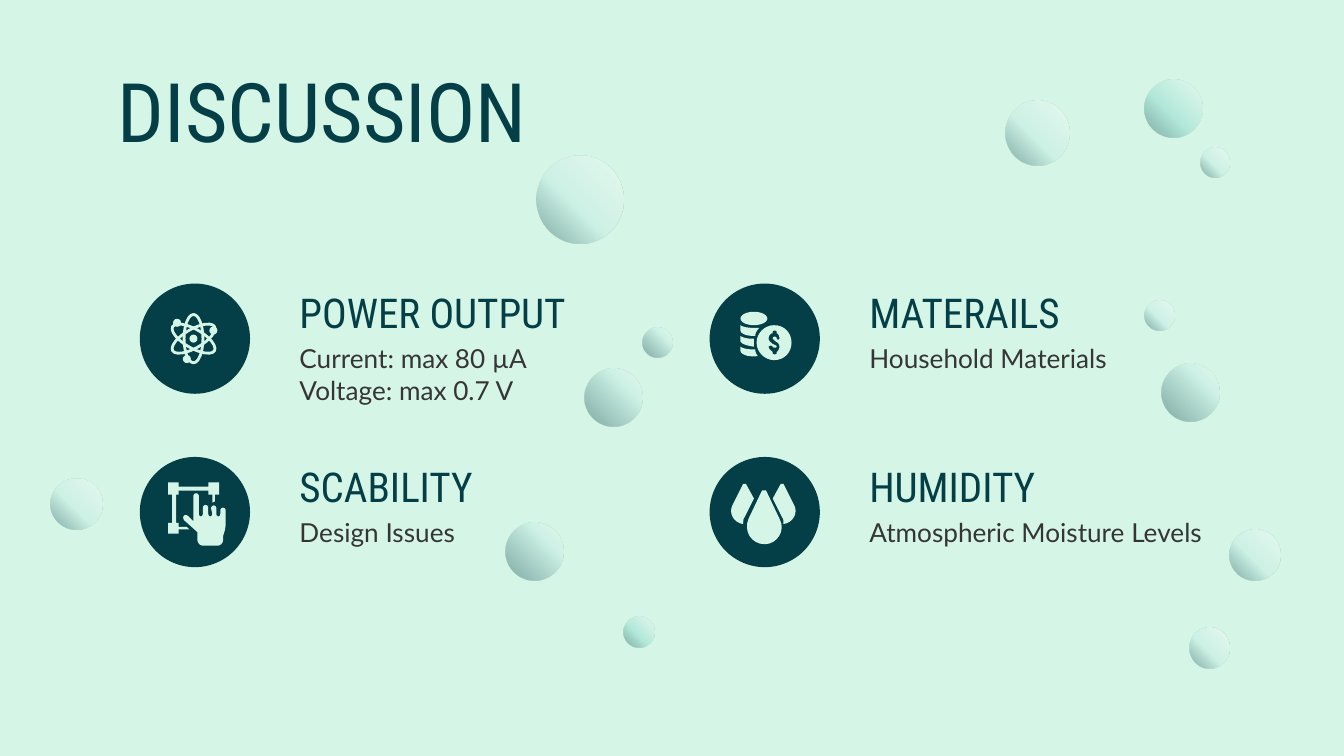
from dataclasses import dataclass
from math import cos, radians, sin

from lxml import etree
from pptx import Presentation
from pptx.dml.color import RGBColor
from pptx.enum.shapes import MSO_SHAPE
from pptx.enum.text import MSO_ANCHOR, PP_ALIGN
from pptx.oxml.ns import qn
from pptx.util import Inches, Pt

OVAL = MSO_SHAPE.OVAL
TOP = MSO_ANCHOR.TOP
LEFT = PP_ALIGN.LEFT

COLORS = {"mint": "D5F5E6", "teal": "043E47", "gray": "353535",
          "white": "FFFFFF", "pale": "C1ECE4", "aqua": "82D9C8"}
HEAD_FONT, BODY_FONT = "Roboto Condensed", "Lato"
COL_STEP, ROW_STEP = 4.24, 1.29
CURVE_STEPS = 8


@dataclass
class Bubble:
    x: float
    y: float
    size: float
    middle: str = "pale"
    stop: int = 56


@dataclass
class Topic:
    col: int
    row: int
    heading: str
    lines: list[str]


BUBBLES = [
    Bubble(0.38, 3.56, 0.38), Bubble(9.15, 3.94, 0.38), Bubble(8.85, 4.67, 0.3),
    Bubble(8.52, 2.24, 0.22), Bubble(8.52, 0.59, 0.43, "aqua"),
    Bubble(8.64, 2.71, 0.43, stop=31), Bubble(8.93, 1.1, 0.22),
    Bubble(4.78, 2.44, 0.22, stop=31), Bubble(3.99, 1.16, 0.65),
    Bubble(4.35, 2.74, 0.43, stop=31), Bubble(3.76, 3.89, 0.43, stop=31),
    Bubble(4.64, 4.59, 0.23, "aqua"), Bubble(7.48, 0.75, 0.48),
]
TOPICS = [
    Topic(0, 0, "POWER OUTPUT", ["Current: max 80 µA", "Voltage: max 0.7 V"]),
    Topic(1, 0, "MATERAILS", ["Household Materials"]),
    Topic(0, 1, "SCABILITY", ["Design Issues"]),
    Topic(1, 1, "HUMIDITY", ["Atmospheric Moisture Levels"]),
]

# Contours: a start point, then lines (x, y) or Bezier curves (x1, y1, x2, y2, x, y).
COIN_RIM = [(5.76, 2.42), (5.69, 2.42, 5.63, 2.48, 5.63, 2.55),
            (5.63, 2.62, 5.69, 2.68, 5.76, 2.68), (5.84, 2.68, 5.89, 2.62, 5.89, 2.55),
            (5.89, 2.48, 5.84, 2.42, 5.76, 2.42)]
DOLLAR = [(5.76, 2.46), (5.77, 2.46, 5.78, 2.46, 5.78, 2.47), (5.78, 2.48),
          (5.79, 2.48, 5.8, 2.5, 5.8, 2.52), (5.8, 2.53, 5.78, 2.53, 5.78, 2.52),
          (5.78, 2.5, 5.75, 2.5, 5.75, 2.52), (5.75, 2.52, 5.76, 2.53, 5.77, 2.54),
          (5.79, 2.55, 5.8, 2.56, 5.8, 2.58), (5.8, 2.6, 5.79, 2.61, 5.78, 2.62),
          (5.78, 2.63), (5.78, 2.64, 5.75, 2.64, 5.75, 2.63), (5.75, 2.62),
          (5.74, 2.61, 5.72, 2.6, 5.72, 2.58), (5.72, 2.57, 5.75, 2.57, 5.75, 2.58),
          (5.75, 2.59, 5.78, 2.59, 5.78, 2.58), (5.78, 2.57, 5.77, 2.57, 5.75, 2.56),
          (5.74, 2.55, 5.72, 2.54, 5.72, 2.52), (5.72, 2.5, 5.73, 2.48, 5.75, 2.48),
          (5.75, 2.47), (5.75, 2.46, 5.76, 2.46, 5.76, 2.46)]
COIN_BANDS = [
    [(5.51, 2.42), (5.51, 2.46), (5.51, 2.48, 5.55, 2.5, 5.61, 2.5), (5.62, 2.5),
     (5.62, 2.48, 5.63, 2.46, 5.65, 2.44), (5.59, 2.44, 5.54, 2.44, 5.51, 2.42)],
    [(5.51, 2.5), (5.51, 2.54), (5.52, 2.56, 5.55, 2.57, 5.61, 2.58),
     (5.61, 2.56, 5.61, 2.54, 5.61, 2.52), (5.58, 2.52, 5.54, 2.52, 5.51, 2.5)],
    [(5.51, 2.58), (5.51, 2.61), (5.51, 2.63, 5.55, 2.66, 5.64, 2.65),
     (5.63, 2.64, 5.62, 2.62, 5.62, 2.6), (5.59, 2.6, 5.54, 2.6, 5.51, 2.58)],
]
FRONT_DROP = [(5.68, 3.65), (5.68, 3.65, 5.67, 3.65, 5.67, 3.65), (5.57, 3.86),
              (5.53, 3.95, 5.59, 4.05, 5.69, 4.05), (5.78, 4.05, 5.85, 3.95, 5.8, 3.86),
              (5.7, 3.65), (5.69, 3.65, 5.69, 3.65, 5.68, 3.65)]
SIDE_DROP = [(5.54, 3.6), (5.53, 3.6, 5.53, 3.6, 5.53, 3.6), (5.45, 3.76),
             (5.42, 3.82, 5.46, 3.89, 5.53, 3.9), (5.53, 3.88, 5.53, 3.86, 5.54, 3.85),
             (5.61, 3.71), (5.55, 3.6), (5.55, 3.6, 5.54, 3.6, 5.54, 3.6)]
HAND = [(1.46, 3.67), (1.45, 3.67, 1.44, 3.68, 1.44, 3.69), (1.44, 3.88), (1.4, 3.84),
        (1.38, 3.82, 1.35, 3.84, 1.37, 3.87), (1.47, 3.96), (1.47, 4.02),
        (1.47, 4.04, 1.49, 4.06, 1.51, 4.06), (1.62, 4.06),
        (1.64, 4.06, 1.66, 4.04, 1.66, 4.02), (1.66, 3.99),
        (1.67, 3.96, 1.68, 3.93, 1.68, 3.89), (1.68, 3.8),
        (1.68, 3.77, 1.64, 3.77, 1.64, 3.8), (1.64, 3.82),
        (1.64, 3.85, 1.61, 3.85, 1.61, 3.82), (1.61, 3.78),
        (1.61, 3.76, 1.58, 3.75, 1.57, 3.78), (1.58, 3.82),
        (1.58, 3.85, 1.55, 3.85, 1.55, 3.82), (1.55, 3.78),
        (1.55, 3.75, 1.51, 3.75, 1.51, 3.78), (1.51, 3.82),
        (1.51, 3.85, 1.48, 3.85, 1.48, 3.82), (1.48, 3.69),
        (1.48, 3.68, 1.47, 3.67, 1.46, 3.67)]
SELECTION = [(1.25, 3.59), (1.25, 3.68), (1.28, 3.68), (1.28, 3.89), (1.25, 3.89),
             (1.25, 3.97), (1.33, 3.97), (1.33, 3.94), (1.41, 3.94), (1.39, 3.92),
             (1.33, 3.92), (1.33, 3.89), (1.31, 3.89), (1.31, 3.68), (1.33, 3.68),
             (1.33, 3.65), (1.55, 3.65), (1.55, 3.68), (1.58, 3.68), (1.58, 3.74),
             (1.6, 3.73), (1.6, 3.68), (1.63, 3.68), (1.63, 3.59), (1.55, 3.59),
             (1.55, 3.62), (1.33, 3.62), (1.33, 3.59)]


def rgb(name: str) -> RGBColor:
    return RGBColor.from_string(COLORS[name])


def paint(shape, color: str) -> None:
    shape.shadow.inherit = False
    shape.fill.solid()
    shape.fill.fore_color.rgb = rgb(color)
    shape.line.fill.background()


def add_oval(s, x: float, y: float, w: float, h: float, color: str):
    shape = s.shapes.add_shape(OVAL, Inches(x), Inches(y), Inches(w), Inches(h))
    paint(shape, color)
    return shape


def add_bubble(s, b: Bubble) -> None:
    """Draw a translucent ball lit from the top right."""
    shape = add_oval(s, b.x, b.y, b.size, b.size, b.middle)
    grad = etree.Element(qn("a:gradFill"), rotWithShape="1")
    stops = etree.SubElement(grad, qn("a:gsLst"))
    for pos, color in ((0, "white"), (b.stop, b.middle), (100, "teal")):
        gs = etree.SubElement(stops, qn("a:gs"), pos=str(pos * 1000))
        clr = etree.SubElement(gs, qn("a:srgbClr"), val=COLORS[color])
        etree.SubElement(clr, qn("a:alpha"), val="41000")
    ray = etree.SubElement(grad, qn("a:path"), path="circle")
    etree.SubElement(ray, qn("a:fillToRect"), l="100000", b="100000")
    solid = shape._element.spPr.find(qn("a:solidFill"))
    solid.getparent().replace(solid, grad)


def flatten(contour: list[tuple]) -> list[tuple]:
    """Turn lines and Bezier curves into points in EMU."""
    points = [contour[0]]
    for seg in contour[1:]:
        if len(seg) == 2:
            points.append(seg)
            continue
        ctrl = [points[-1], seg[:2], seg[2:4], seg[4:]]
        for i in range(1, CURVE_STEPS + 1):
            t = i / CURVE_STEPS
            weights = ((1 - t) ** 3, 3 * t * (1 - t) ** 2, 3 * t * t * (1 - t), t ** 3)
            points.append(tuple(sum(w * c[k] for w, c in zip(weights, ctrl))
                                for k in (0, 1)))
    return [(Inches(x), Inches(y)) for x, y in points]


def add_outline(s, *contours: list[tuple]) -> None:
    """Fill one shape; contours after the first are holes."""
    first, *holes = [flatten(c) for c in contours]
    builder = s.shapes.build_freeform(*first[0])
    builder.add_line_segments(first[1:])
    for hole in holes:
        builder.move_to(*hole[0])
        builder.add_line_segments(hole[1:])
    paint(builder.convert_to_shape(), "mint")


def mirror(contour: list[tuple], axis: float) -> list[tuple]:
    return [tuple(2 * axis - v if i % 2 == 0 else v for i, v in enumerate(seg))
            for seg in contour]


def add_atom(s, cx: float, cy: float) -> None:
    for angle in (0, 60, 120):
        orbit = add_oval(s, cx - 0.07, cy - 0.18, 0.14, 0.36, "mint")
        orbit.fill.background()
        orbit.line.color.rgb = rgb("mint")
        orbit.line.width = Pt(1.5)
        orbit.rotation = angle
    for angle, reach, r in ((0, 0, 0.03), (224, 0.17, 0.03),
                            (-22, 0.16, 0.03), (108, 0.16, 0.03)):
        x, y = cx + reach * cos(radians(angle)), cy + reach * sin(radians(angle))
        add_oval(s, x - r, y - r, 2 * r, 2 * r, "mint")


def add_text(s, x: float, y: float, w: float, h: float, lines: list[str],
             font: str, size: int, color: str) -> None:
    tf = s.shapes.add_textbox(Inches(x), Inches(y), Inches(w), Inches(h)).text_frame
    frame = {"word_wrap": True, "vertical_anchor": TOP}
    frame |= {f"margin_{side}": Inches(0.1) for side in ("left", "top", "right", "bottom")}
    for name, value in frame.items():
        setattr(tf, name, value)
    for i, line in enumerate(lines):
        p = tf.paragraphs[0] if i == 0 else tf.add_paragraph()
        p.alignment = LEFT
        r = p.add_run()
        r.text = line
        for name, value in {"name": font, "size": Pt(size)}.items():
            setattr(r.font, name, value)
        r.font.color.rgb = rgb(color)


def main() -> None:
    prs = Presentation()
    prs.slide_width = Inches(10)
    prs.slide_height = Inches(10 * 9 / 16)
    s = prs.slides.add_slide(prs.slide_layouts[6])
    s.background.fill.solid()
    s.background.fill.fore_color.rgb = rgb("mint")

    for bubble in BUBBLES:
        add_bubble(s, bubble)
    add_text(s, 0.78, 0.35, 8.44, 0.75, ["DISCUSSION"], HEAD_FONT, 44, "teal")
    for t in TOPICS:
        dx, dy = t.col * COL_STEP, t.row * ROW_STEP
        add_oval(s, 1.04 + dx, 2.11 + dy, 0.82, 0.82, "teal")
        add_text(s, 2.13 + dx, 2.04 + dy, 2.71, 0.41, [t.heading], HEAD_FONT, 22, "teal")
        add_text(s, 2.13 + dx, 2.45 + dy, 2.71, 0.58, t.lines, BODY_FONT, 14, "gray")

    add_atom(s, 1.44, 2.52)
    add_outline(s, COIN_RIM, DOLLAR)
    add_oval(s, 5.51, 2.32, 0.2, 0.1, "mint")
    for icon in (*COIN_BANDS, FRONT_DROP, SIDE_DROP, mirror(SIDE_DROP, 5.68),
                 HAND, SELECTION):
        add_outline(s, icon)
    prs.save("out.pptx")


if __name__ == "__main__":
    main()
